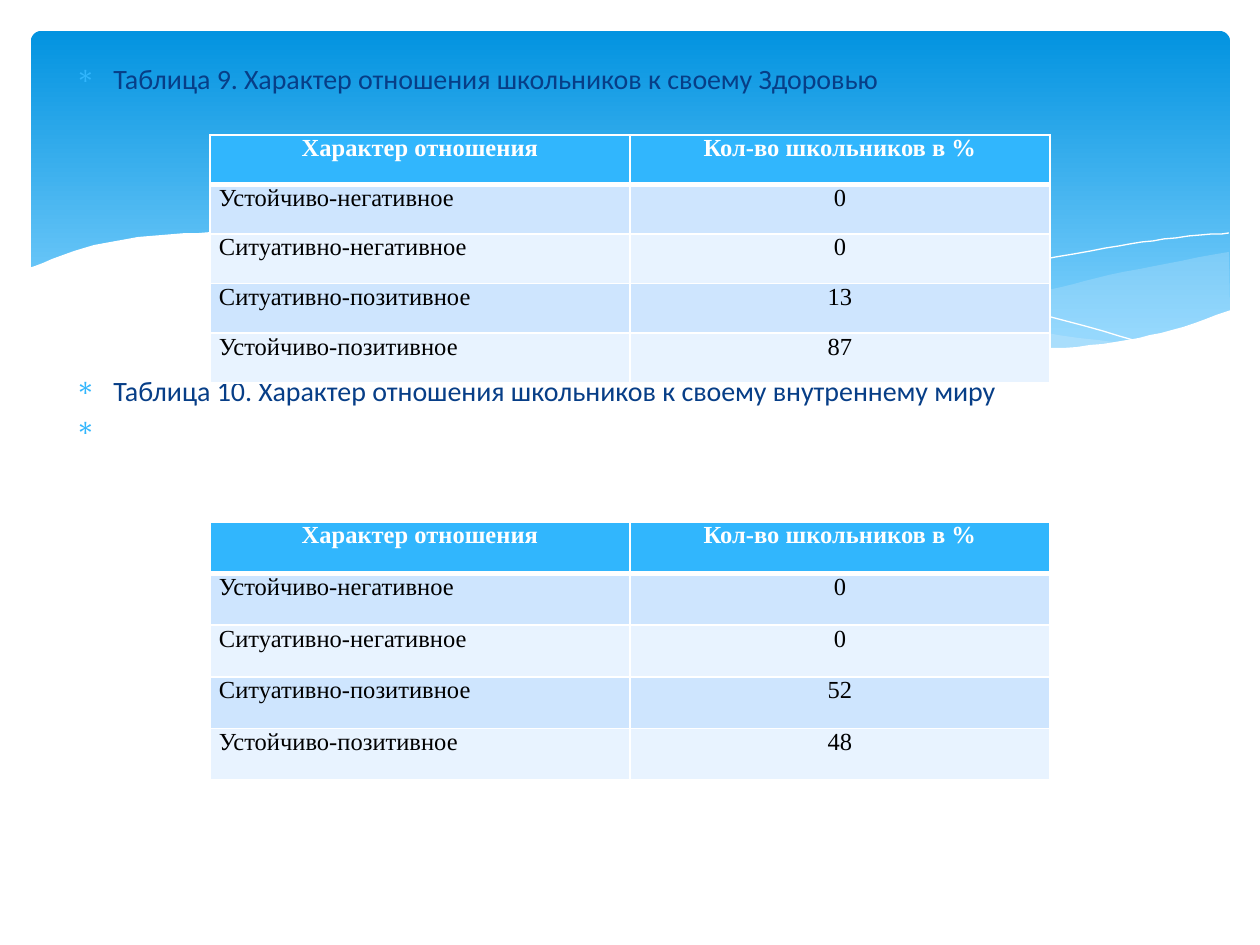
from lxml.etree import SubElement
from pptx import Presentation
from pptx.dml.color import RGBColor
from pptx.enum.shapes import MSO_SHAPE
from pptx.enum.text import PP_ALIGN
from pptx.oxml.ns import qn
from pptx.util import Pt

PX = 914400 // 126
COLORS = {
    "sky": "0293E0", "pale": "83D3FE", "mist": "C6E7FC", "white": "FFFFFF",
    "navy": "073E87", "head": "31B6FD", "odd": "CEE5FE", "even": "E8F3FF",
    "black": "000000",
}

# Wave outlines: each curve is a list of points in px
WEDGE = [
    [(1229, 252), (1123, 272), (1048, 290), (949, 312), (833, 334)],
    [(833, 334), (906, 343), (969, 349), (1038, 349), (1099, 345),
     (1160, 334), (1230, 311)],
]
BAND = [
    [(1125, 344), (1017, 328), (890, 302), (793, 280), (699, 258),
     (616, 244), (529, 236), (455, 233), (360, 241)],
    [(360, 241), (456, 256), (566, 280), (668, 302), (799, 329),
     (910, 345), (1003, 350), (1068, 349), (1125, 344)],
]
LONG = [[(389, 246), (445, 238), (524, 236), (616, 239), (701, 248),
         (801, 262), (916, 285), (1047, 316), (1143, 343)]]
SHORT = [[(772, 324), (876, 296), (978, 272), (1091, 251), (1164, 239),
          (1229, 233)]]
FRONT = [
    [(1231, 310), (1172, 330), (1103, 344), (1019, 349), (915, 343),
     (789, 325), (667, 301), (563, 277), (460, 255), (368, 239),
     (290, 233), (223, 232), (150, 236), (84, 248), (29, 268)],
    [(29, 415), (1231, 415)],
]

# Table wording
TITLES = ["Характер отношения", "Кол-во школьников в %"]
KINDS = ["Устойчиво-негативное", "Ситуативно-негативное",
         "Ситуативно-позитивное", "Устойчиво-позитивное"]


def rgb(name):
    return RGBColor.from_string(COLORS[name])


def smooth(pts, steps=6):
    """Catmull-Rom curve through the points."""
    if len(pts) < 3:
        return pts
    ends = [pts[0], *pts, pts[-1]]
    out = []
    for a, b, c, d in zip(ends, ends[1:], ends[2:], ends[3:]):
        for i in range(steps):
            t = i / steps
            out.append(tuple(
                q + t * (r - p + t * (2 * p - 5 * q + 4 * r - s
                                      + t * (3 * q - p - 3 * r + s))) / 2
                for p, q, r, s in zip(a, b, c, d)))
    return out + [pts[-1]]


def add_wave(slide, curves, fill=None, clear=0):
    pts = [pt for curve in curves for pt in smooth(curve)]
    pen = slide.shapes.build_freeform(*pts[0], scale=PX)
    pen.add_line_segments(pts[1:], close=fill is not None)
    wave = pen.convert_to_shape()
    wave.shadow.inherit = False
    if fill is None:
        wave.fill.background()
        wave.line.color.rgb = rgb("white")
        wave.line.width = Pt(0)
        return
    wave.fill.solid()
    wave.fill.fore_color.rgb = rgb(fill)
    wave.line.fill.background()
    if clear:
        tint = wave._element.spPr.find(qn("a:solidFill"))[0]
        SubElement(tint, qn("a:alpha"), val=str((100 - clear) * 1000))


def add_sky(slide):
    sky = slide.shapes.add_shape(MSO_SHAPE.ROUNDED_RECTANGLE,
                                 31 * PX, 31 * PX, 1199 * PX, 340 * PX)
    sky.adjustments[0] = 0.03
    sky.shadow.inherit = False
    sky.line.fill.background()
    sky.fill.gradient()
    sky.fill.gradient_angle = 270
    stops = zip(sky.fill.gradient_stops, ["sky", "pale"], [0, 0.9])
    for stop, name, pos in stops:
        stop.color.rgb = rgb(name)
        stop.position = pos


def add_bullets(slide, items):
    box = slide.shapes.add_textbox(63 * PX, 55 * PX, 1029 * PX, 837 * PX)
    frame = box.text_frame
    frame.word_wrap = True
    for i, (text, gap) in enumerate(items):
        para = frame.add_paragraph() if i else frame.paragraphs[0]
        para.text = text
        para.space_before = Pt(gap)
        font = para.runs[0].font
        font.size, font.name = Pt(16), "Calibri"
        font.color.rgb = rgb("navy")
        props = para._p.get_or_add_pPr()
        props.set("marL", str(38 * PX))
        props.set("indent", str(-38 * PX))
        tint = SubElement(props, qn("a:buClr"))
        SubElement(tint, qn("a:srgbClr"), val=COLORS["head"])
        SubElement(props, qn("a:buChar"), char="∗")


def set_edges(cell, base):
    """White borders; these must come before the cell's fill."""
    props = cell._tc.get_or_add_tcPr()
    for side, width in zip("LRTB", [1, 1, 1, base]):
        edge = SubElement(props, qn(f"a:ln{side}"), w=str(Pt(width)))
        fill = SubElement(edge, qn("a:solidFill"))
        SubElement(fill, qn("a:srgbClr"), val=COLORS["white"])


def set_cell(cell, text, fill, head, left):
    cell.margin_left = cell.margin_right = 9 * PX
    cell.margin_top = cell.margin_bottom = 0
    set_edges(cell, 3 if head else 1)
    cell.fill.solid()
    cell.fill.fore_color.rgb = rgb(fill)
    para = cell.text_frame.paragraphs[0]
    para.text = text
    para.alignment = PP_ALIGN.LEFT if left else PP_ALIGN.CENTER
    font = para.runs[0].font
    font.size, font.name, font.bold = Pt(14), "Times New Roman", head
    font.color.rgb = rgb("white" if head else "black")


def add_grid(slide, top, high, values):
    rows = [TITLES, *zip(KINDS, values)]
    grid = slide.shapes.add_table(len(rows), 2, 210 * PX, top * PX,
                                  840 * PX, high * PX).table
    for r, row in enumerate(rows):
        fill = "head" if r == 0 else "odd" if r % 2 else "even"
        for c, text in enumerate(row):
            set_cell(grid.cell(r, c), text, fill, r == 0, r > 0 and c == 0)


def main():
    deck = Presentation()
    deck.slide_width, deck.slide_height = 1260 * PX, 945 * PX
    slide = deck.slides.add_slide(deck.slide_layouts[6])

    # Backdrop
    add_sky(slide)
    add_wave(slide, WEDGE, "mist", 71)
    add_wave(slide, BAND, "mist", 60)
    add_wave(slide, LONG)
    add_wave(slide, SHORT)
    add_wave(slide, FRONT, "white")

    # Captions, with room for the first table between them
    add_bullets(slide, [
        ("Таблица 9. Характер отношения школьников к своему Здоровью", 3),
        ("Таблица 10. Характер отношения школьников к своему внутреннему миру",
         159),
        (" ", 4),
    ])

    # Tables
    add_grid(slide, 135, 248, ["0", "0", "13", "87"])
    add_grid(slide, 522, 258, ["0", "0", "52", "48"])
    deck.save("out.pptx")


if __name__ == "__main__":
    main()
